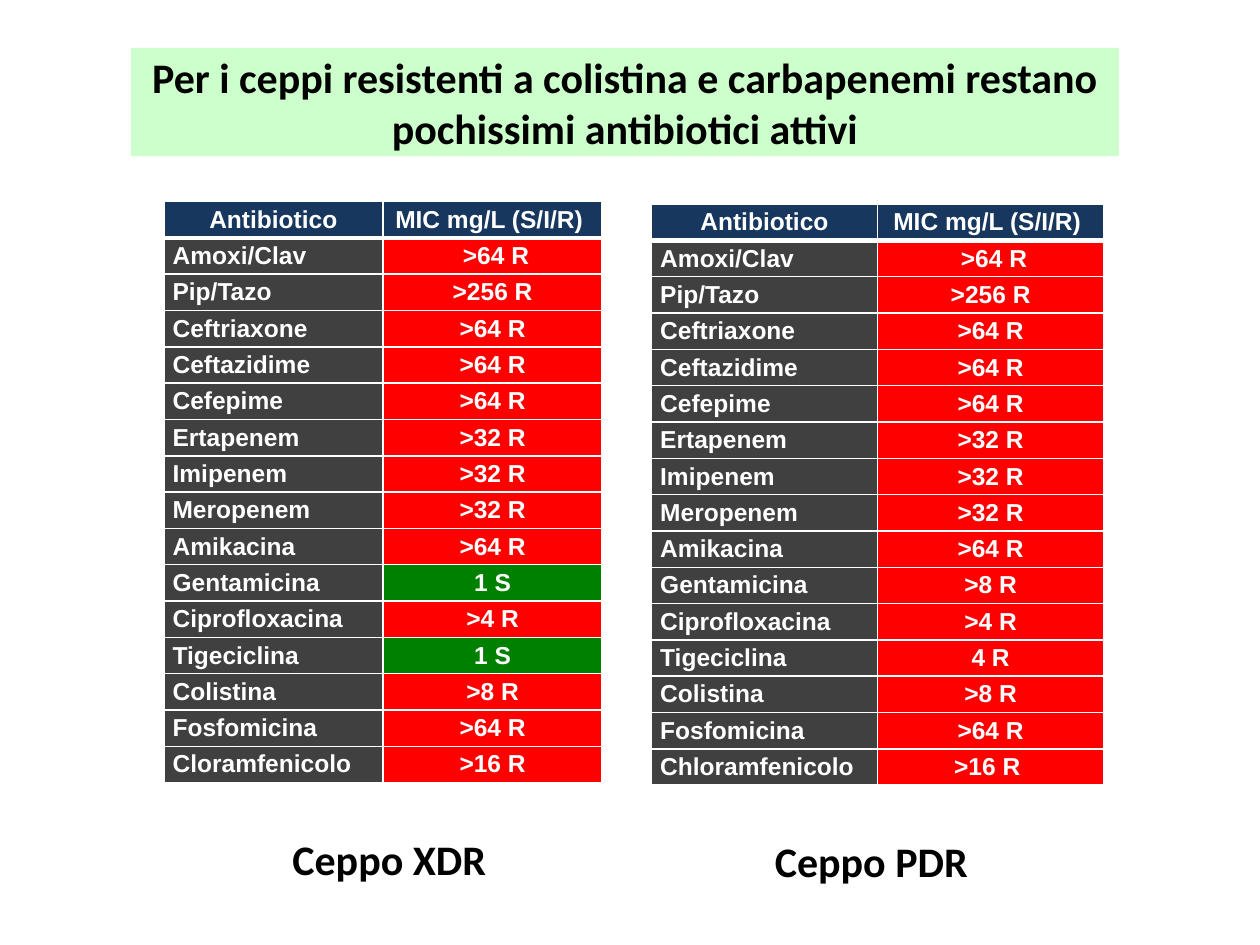
from lxml import etree
from pptx import Presentation
from pptx.dml.color import RGBColor
from pptx.enum.shapes import MSO_SHAPE
from pptx.enum.text import MSO_ANCHOR, MSO_AUTO_SIZE, PP_ALIGN
from pptx.oxml.ns import qn
from pptx.util import Inches, Pt

RECTANGLE = MSO_SHAPE.RECTANGLE
MIDDLE = MSO_ANCHOR.MIDDLE
FIT_SHAPE = MSO_AUTO_SIZE.SHAPE_TO_FIT_TEXT
LEFT, CENTER = PP_ALIGN.LEFT, PP_ALIGN.CENTER

BLACK = RGBColor(0x00, 0x00, 0x00)
WHITE = RGBColor(0xFF, 0xFF, 0xFF)
PALE_GREEN = RGBColor(0xCC, 0xFF, 0xCC)
NAVY = RGBColor(0x17, 0x37, 0x5E)
CHARCOAL = RGBColor(0x40, 0x40, 0x40)
RED = RGBColor(0xFF, 0x00, 0x00)
GREEN = RGBColor(0x00, 0x80, 0x00)

SIDE_INSET = Inches(0.07)
EDGE_INSET = SIDE_INSET // 2
ROW_HEIGHT = Inches(0.25)

TITLE = "Per i ceppi resistenti a colistina e carbapenemi restano pochissimi antibiotici attivi"
HEADER = ("Antibiotico", "MIC mg/L (S/I/R) ")
SHARED_RESULTS = [
    ("Amoxi/Clav", " >64 R"),
    ("Pip/Tazo", ">256 R"),
    ("Ceftriaxone", ">64 R"),
    ("Ceftazidime", ">64 R"),
    ("Cefepime", ">64 R"),
    ("Ertapenem", ">32 R"),
    ("Imipenem", ">32 R"),
    ("Meropenem", ">32 R"),
    ("Amikacina", ">64 R"),
]
PDR_RESULTS = SHARED_RESULTS + [
    ("Gentamicina", ">8 R"),
    ("Ciprofloxacina", ">4 R"),
    ("Tigeciclina", "4 R"),
    ("Colistina", ">8 R"),
    ("Fosfomicina", ">64 R"),
    ("Chloramfenicolo", ">16 R "),
]
XDR_RESULTS = SHARED_RESULTS + [
    ("Gentamicina", "1 S"),
    ("Ciprofloxacina", ">4 R"),
    ("Tigeciclina", "1 S"),
    ("Colistina", ">8 R"),
    ("Fosfomicina", ">64 R"),
    ("Cloramfenicolo", ">16 R"),
]


class SlideBuilder:
    heading_font, heading_size = "Calibri", Pt(24)
    table_font, table_size = "Arial", Pt(14)

    def __init__(self, slide):
        self.slide = slide

    def set_text(self, text_frame, text, font_name, size, color, alignment=CENTER):
        text_frame.text = text
        paragraph = text_frame.paragraphs[0]
        paragraph.alignment = alignment
        font = paragraph.runs[0].font
        font.name, font.size, font.bold = font_name, size, True
        font.color.rgb = color

    def set_insets(self, target):
        target.margin_left = target.margin_right = SIDE_INSET
        target.margin_top = target.margin_bottom = EDGE_INSET
        target.vertical_anchor = MIDDLE

    def add_title(self, text, left, top, width, height):
        shape = self.slide.shapes.add_shape(RECTANGLE, left, top, width, height)
        shape.shadow.inherit = False
        shape.fill.solid()
        shape.fill.fore_color.rgb = PALE_GREEN
        shape.line.fill.background()
        text_frame = shape.text_frame
        text_frame.word_wrap = True
        self.set_insets(text_frame)
        self.set_text(text_frame, text, self.heading_font, self.heading_size, BLACK)

    def add_caption(self, text, left, top, width, height):
        text_frame = self.slide.shapes.add_textbox(left, top, width, height).text_frame
        text_frame.word_wrap = False
        text_frame.auto_size = FIT_SHAPE
        self.set_text(text_frame, text, self.heading_font, self.heading_size, BLACK)

    def add_borders(self, cell, bottom_width):
        properties = cell._tc.get_or_add_tcPr()
        widths = {"a:lnL": Pt(1), "a:lnR": Pt(1), "a:lnT": Pt(1), "a:lnB": bottom_width}
        for position, (tag, width) in enumerate(widths.items()):
            line = etree.Element(qn(tag), w=str(width))
            fill = etree.SubElement(line, qn("a:solidFill"))
            etree.SubElement(fill, qn("a:srgbClr"), val=str(WHITE))
            properties.insert(position, line)

    def add_cell(self, cell, text, fill, alignment, bottom_width):
        self.set_insets(cell)
        self.set_text(cell.text_frame, text, self.table_font, self.table_size, WHITE, alignment)
        cell.fill.solid()
        cell.fill.fore_color.rgb = fill
        self.add_borders(cell, bottom_width)

    def add_results_table(self, results, left, top, width):
        rows = [HEADER] + results
        frame = self.slide.shapes.add_table(
            len(rows), len(HEADER), left, top, width, ROW_HEIGHT * len(rows))
        table = frame.table
        table.first_row = table.horz_banding = False
        for row_index, (antibiotic, result) in enumerate(rows):
            if row_index == 0:
                name_fill = result_fill = NAVY
                name_alignment, bottom_width = CENTER, Pt(3)
            else:
                name_fill = CHARCOAL
                result_fill = GREEN if result.endswith("S") else RED
                name_alignment, bottom_width = LEFT, Pt(1)
            self.add_cell(table.cell(row_index, 0), antibiotic, name_fill,
                          name_alignment, bottom_width)
            self.add_cell(table.cell(row_index, 1), result, result_fill,
                          CENTER, bottom_width)


def main():
    presentation = Presentation()
    presentation.slide_width, presentation.slide_height = Inches(10), Inches(7.5)
    slide = presentation.slides.add_slide(presentation.slide_layouts[6])
    builder = SlideBuilder(slide)
    builder.add_results_table(PDR_RESULTS, Inches(5.17), Inches(1.62), Inches(3.59))
    builder.add_results_table(XDR_RESULTS, Inches(1.3), Inches(1.6), Inches(3.48))
    builder.add_caption("Ceppo PDR", Inches(6.04), Inches(6.58), Inches(1.75), Inches(0.5))
    builder.add_caption("Ceppo XDR", Inches(2.21), Inches(6.57), Inches(1.76), Inches(0.5))
    builder.add_title(TITLE, Inches(1.04), Inches(0.38), Inches(7.84), Inches(0.86))
    presentation.save("out.pptx")


if __name__ == "__main__":
    main()
